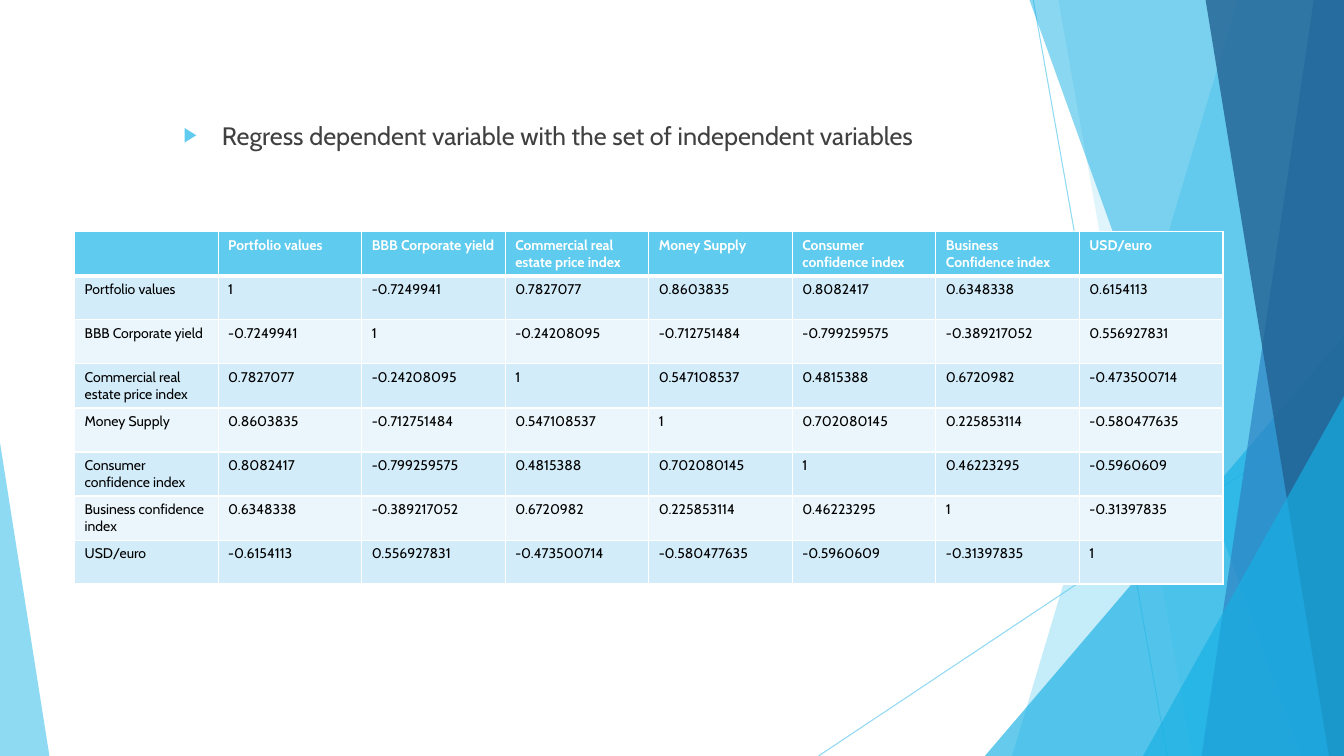
from lxml import etree
from pptx import Presentation
from pptx.dml.color import RGBColor
from pptx.enum.shapes import MSO_CONNECTOR, MSO_SHAPE
from pptx.enum.text import MSO_ANCHOR, MSO_AUTO_SIZE, PP_ALIGN
from pptx.oxml.ns import qn
from pptx.util import Inches, Pt

LINE = MSO_CONNECTOR.STRAIGHT
WEDGE = MSO_SHAPE.ISOSCELES_TRIANGLE
TOP = MSO_ANCHOR.TOP
FIXED = MSO_AUTO_SIZE.NONE
CENTER = PP_ALIGN.CENTER

WHITE = RGBColor(0xFF, 0xFF, 0xFF)
BLACK = RGBColor(0, 0, 0)
GREY = RGBColor(0x40, 0x40, 0x40)
SKY = RGBColor(0x5F, 0xCB, 0xEF)
CYAN = RGBColor(0x17, 0xB0, 0xE4)
BLUE = RGBColor(0x2E, 0x83, 0xC3)
NAVY = RGBColor(0x22, 0x62, 0x92)
BANDS = RGBColor(0xD2, 0xEC, 0xF9), RGBColor(0xEA, 0xF6, 0xFC)
FONT = "Cabin"

WIDTH, HEIGHT = Inches(13.33), Inches(7.5)

# Facets, in percent of the box: (x, y) ends of each line
RAYS = [((76.88, 0), (86.85, 100)), ((100, 53.73), (60.9, 100))]
# Left edge at the top, left edge at the bottom, colour, opacity
SLABS = [
    (92.1, 75.3, SKY, 36),
    (78.75, 88.72, SKY, 20),
    (76.6, 96.82, CYAN, 50),
    (97.75, 89.4, BLUE, 70),
    (89.7, 98.88, NAVY, 80),
]
# Left, top, right, apex share, colour, opacity; all reach the bottom
WEDGES = [
    (73.28, 44.4, 100, 1, CYAN, 66),
    (85.05, 52.4, 100, 1, CYAN, 66),
    (0, 58.53, 3.68, 0, SKY, 70),
]

POINT = "Regress dependent variable with the set of independent variables"
HEADS = ["", "Portfolio values", "BBB Corporate yield",
         "Commercial real estate price index", "Money Supply",
         "Consumer confidence index", "Business Confidence index", "USD/euro"]
ROWS = [
    ["Portfolio values", "1", "-0.7249941", "0.7827077", "0.8603835",
     "0.8082417", "0.6348338", "0.6154113"],
    ["BBB Corporate yield", "-0.7249941", "1", "-0.24208095", "-0.712751484",
     "-0.799259575", "-0.389217052", "0.556927831"],
    ["Commercial real estate price index", "0.7827077", "-0.24208095", "1",
     "0.547108537", "0.4815388", "0.6720982", "-0.473500714"],
    ["Money Supply", "0.8603835", "-0.712751484", "0.547108537", "1",
     "0.702080145", "0.225853114", "-0.580477635"],
    ["Consumer confidence index", "0.8082417", "-0.799259575", "0.4815388",
     "0.702080145", "1", "0.46223295", "-0.5960609"],
    ["Business confidence index", "0.6348338", "-0.389217052", "0.6720982",
     "0.225853114", "0.46223295", "1", "-0.31397835"],
    ["USD/euro", "-0.6154113", "0.556927831", "-0.473500714", "-0.580477635",
     "-0.5960609", "-0.31397835", "1"],
]


def style(item, **form):
    for name, value in form.items():
        setattr(item, name, value)


def add_xml(parent, tag, **attrs):
    return etree.SubElement(parent, qn(tag), attrs)


def fade(holder, part):
    """Set the opacity, in percent, of a solid fill."""
    color = holder.find(".//" + qn("a:solidFill"))[0]
    add_xml(color, "a:alpha", val=str(part * 1000))


def paint(shape, color, part):
    shape.shadow.inherit = False
    shape.fill.solid()
    shape.fill.fore_color.rgb = color
    fade(shape._element.spPr, part)
    shape.line.fill.background()


def add_facets(shapes, box):
    left, top, width, height = box

    def spot(x, y):
        return round(left + width * x / 100), round(top + height * y / 100)

    # Thin rays
    for start, end in RAYS:
        ray = shapes.add_connector(LINE, *spot(*start), *spot(*end))
        style(ray.line, width=Pt(0.75))
        ray.line.color.rgb = SKY
        props = ray._element.spPr
        fade(props, 70)
        add_xml(props, "a:effectLst")

    # Slabs that run to the right edge, with one wedge among them
    def add_wedge(x, y, right, apex, color, part):
        (x0, y0), (x1, y1) = spot(x, y), spot(right, 100)
        wedge = shapes.add_shape(WEDGE, x0, y0, x1 - x0, y1 - y0)
        wedge.adjustments[0] = apex
        paint(wedge, color, part)

    for count, (upper, lower, color, part) in enumerate(SLABS):
        if count == 2:
            add_wedge(*WEDGES[0])
        path = shapes.build_freeform(*spot(upper, 0))
        path.add_line_segments([spot(100, 0), spot(100, 100), spot(lower, 100)])
        paint(path.convert_to_shape(), color, part)
    for wedge in WEDGES[1:]:
        add_wedge(*wedge)


def add_point(body, box):
    left, top, width, height = box
    style(body, left=left, top=top, width=width, height=height)
    frame = body.text_frame
    style(frame, word_wrap=True, auto_size=FIXED, vertical_anchor=TOP,
          margin_top=Inches(0.93))
    para = frame.paragraphs[0]
    style(para, text=POINT, alignment=CENTER, space_before=Pt(0))
    font = para.runs[0].font
    style(font, name=FONT, size=Pt(18))
    font.color.rgb = GREY
    # Arrow bullet
    props = para._p.get_or_add_pPr()
    indent = Inches(0.38)
    props.set("marL", str(indent))
    props.set("indent", str(-indent))
    add_xml(add_xml(props, "a:buClr"), "a:srgbClr", val=str(SKY))
    add_xml(props, "a:buSzPct", val="80000")
    add_xml(props, "a:buChar", char="▶")


def set_edges(cell, **edges):
    """Put white borders before the fill of a cell; widths in points."""
    props = cell._tc.get_or_add_tcPr()
    for place, (side, width) in enumerate(edges.items()):
        edge = add_xml(props, "a:ln" + side, w=str(Pt(width)))
        add_xml(add_xml(edge, "a:solidFill"), "a:srgbClr", val=str(WHITE))
        props.insert(place, edge)


def add_grid(shapes, box):
    data = [HEADS] + ROWS
    table = shapes.add_table(len(data), len(HEADS), *box).table
    for r, row in enumerate(data):
        head = r == 0
        for c, text in enumerate(row):
            cell = table.cell(r, c)
            cell.fill.solid()
            cell.fill.fore_color.rgb = SKY if head else BANDS[(r - 1) % 2]
            set_edges(cell, L=1, R=1, T=3 if r == 1 else 1, B=3 if head else 1)
            if text:
                cell.text = text
                font = cell.text_frame.paragraphs[0].runs[0].font
                style(font, name=FONT, size=Pt(10), bold=head)
                font.color.rgb = WHITE if head else BLACK


def main():
    deck = Presentation()
    style(deck, slide_width=WIDTH, slide_height=HEIGHT)
    slide = deck.slides.add_slide(deck.slide_layouts[1])
    shapes = slide.shapes
    title, body = shapes.title, slide.placeholders[1]
    title._element.getparent().remove(title._element)

    add_facets(shapes, (0, 0, WIDTH, HEIGHT))
    # Bring the text in front of the facets
    body._element.getparent().append(body._element)
    add_point(body, [Inches(n) for n in (0.74, 0.26, 9.4, 6.35)])
    add_grid(shapes, [Inches(n) for n in (0.74, 2.3, 11.39, 3.49)])
    deck.save("out.pptx")


if __name__ == "__main__":
    main()
